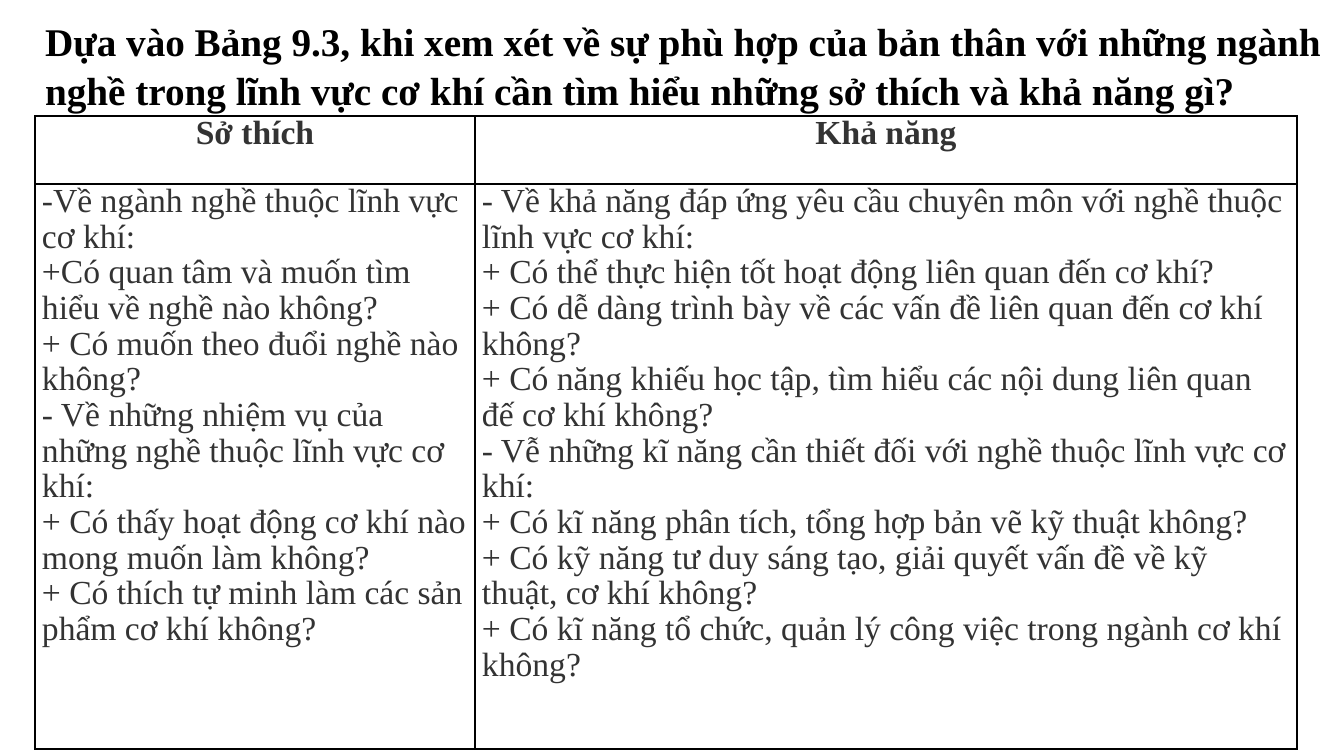
from lxml.etree import SubElement
from pptx import Presentation
from pptx.dml.color import RGBColor
from pptx.enum.text import MSO_ANCHOR, MSO_AUTO_SIZE, PP_ALIGN
from pptx.oxml.ns import qn
from pptx.util import Pt

PX = 914400 / 100.8
FONT = "Times New Roman"
BLACK = RGBColor(0, 0, 0)
GREY = RGBColor(0x33, 0x33, 0x33)

TITLE = ("Dựa vào Bảng 9.3, khi xem xét về sự phù hợp của bản thân với những ngành "
         "nghề trong lĩnh vực cơ khí cần tìm hiểu những sở thích và khả năng gì?")
HEADS = ["Sở thích", "Khả năng"]
LIKES = [
    "-Về ngành nghề thuộc lĩnh vực cơ khí:",
    "+Có quan tâm và muốn tìm hiểu về nghề nào không?",
    "+ Có muốn theo đuổi nghề nào không?",
    "- Về những nhiệm vụ của những nghề thuộc lĩnh vực cơ khí:",
    "+ Có thấy hoạt động cơ khí nào mong muốn làm không?",
    "+ Có thích tự minh làm các sản phẩm cơ khí không?",
]
SKILLS = [
    "- Về khả năng đáp ứng yêu cầu chuyên môn với nghề thuộc lĩnh vực cơ khí:",
    "+ Có thể thực hiện tốt hoạt động liên quan đến cơ khí?",
    "+ Có dễ dàng trình bày về các vấn đề liên quan đến cơ khí không?",
    "+ Có năng khiếu học tập, tìm hiểu các nội dung liên quan đế cơ khí không?",
    "- Vễ những kĩ năng cần thiết đối với nghề thuộc lĩnh vực cơ khí:",
    "+ Có kĩ năng phân tích, tổng hợp bản vẽ kỹ thuật không?",
    "+ Có kỹ năng tư duy sáng tạo, giải quyết vấn đề về kỹ thuật, cơ khí không?",
    "+ Có kĩ năng tổ chức, quản lý công việc trong ngành cơ khí không?",
]


def px(num):
    """Turn pixels into EMU."""
    return round(num * PX)


def style(frame, size, color, bold, align, gap):
    """Format every paragraph and run of a text frame."""
    for para in frame.paragraphs:
        para.alignment = align
        para.line_spacing = gap
        para.space_before = Pt(0)
        for run in para.runs:
            font = run.font
            font.name, font.size, font.bold = FONT, Pt(size), bold
            font.color.rgb = color


def border(cell):
    """Draw a thin black line on all four sides of a cell."""
    props = cell._tc.get_or_add_tcPr()
    for place, side in enumerate(("lnL", "lnR", "lnT", "lnB")):
        line = SubElement(props, qn("a:" + side), w=str(Pt(1)))
        fill = SubElement(line, qn("a:solidFill"))
        SubElement(fill, qn("a:srgbClr"), val=str(BLACK))
        props.insert(place, line)


def add_title(slide, left, top, width, height):
    """Place the question in the title placeholder."""
    title = slide.shapes.title
    title.left, title.top = px(left), px(top)
    title.width, title.height = px(width), px(height)
    frame = title.text_frame
    frame.text = TITLE
    frame.word_wrap = True
    frame.auto_size = MSO_AUTO_SIZE.NONE
    frame.vertical_anchor = MSO_ANCHOR.TOP
    style(frame, 28, BLACK, True, PP_ALIGN.LEFT, 1.05)


def add_grid(slide, left, top, width, height):
    """Place the table of interests and abilities."""
    first, head = 440, 68
    table = slide.shapes.add_table(
        2, 2, px(left), px(top), px(width), px(height)).table
    table.first_row = table.horz_banding = False
    for col, size in zip(table.columns, (first, width - first)):
        col.width = px(size)
    for row, size in zip(table.rows, (head, height - head)):
        row.height = px(size)
    texts = HEADS + ["\n".join(LIKES), "\n".join(SKILLS)]
    for num, (cell, text) in enumerate(zip(table.iter_cells(), texts)):
        top_row = num < 2
        cell.margin_left = cell.margin_right = px(7)
        cell.margin_top = cell.margin_bottom = 0
        cell.fill.background()
        border(cell)
        cell.text_frame.text = text
        align = PP_ALIGN.CENTER if top_row else PP_ALIGN.LEFT
        style(cell.text_frame, 24, GREY, top_row, align, 0.96)


def main():
    """Build and save the slide."""
    deck = Presentation()
    deck.slide_width, deck.slide_height = px(1344), px(756)
    slide = deck.slides.add_slide(deck.slide_layouts[5])
    add_title(slide, 35, 10, 1299, 105)
    add_grid(slide, 35, 116, 1262, 633)
    deck.save("out.pptx")


if __name__ == "__main__":
    main()
